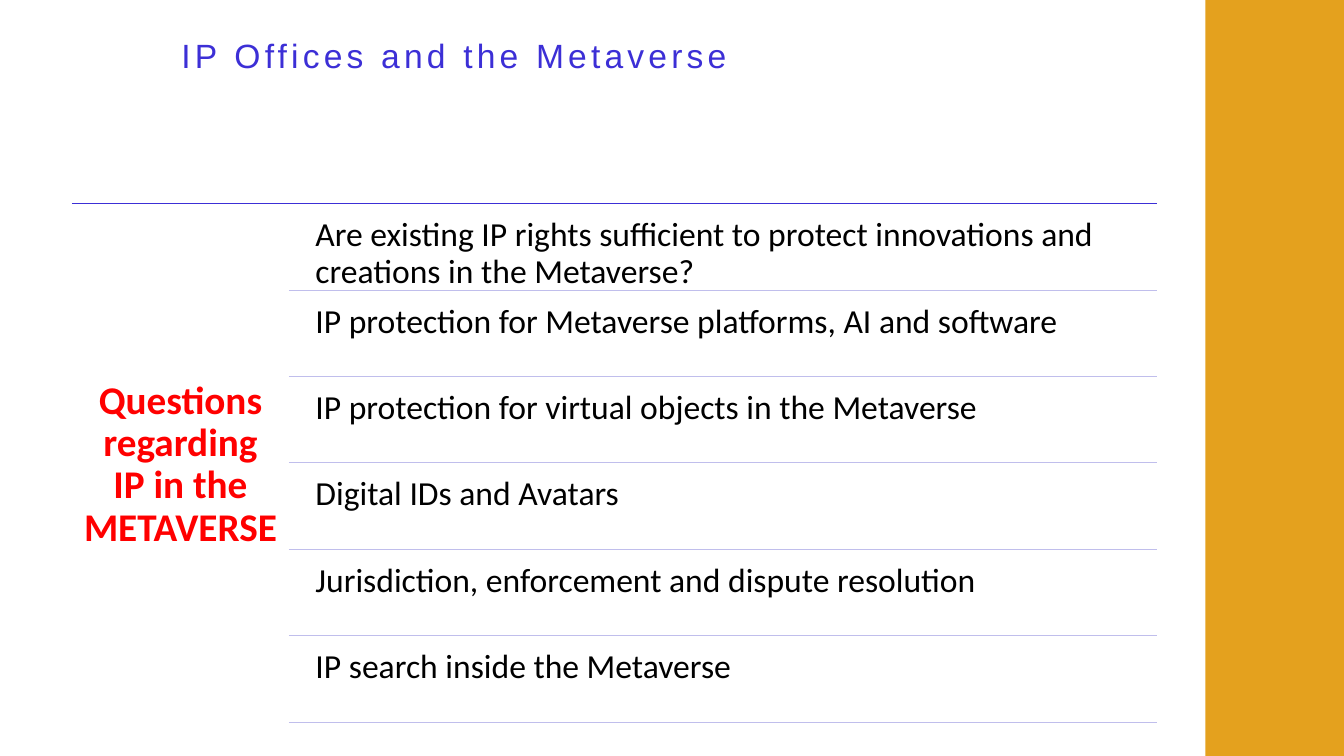
from dataclasses import dataclass

from lxml import etree
from pptx import Presentation
from pptx.dml.color import RGBColor
from pptx.enum import shapes, text
from pptx.oxml import ns
from pptx.util import Pt

TITLE = "IP Offices and the Metaverse"
TOPIC = "Questions regarding IP in the METAVERSE"
QUESTIONS = [
    "Are existing IP rights sufficient to protect innovations and creations in the Metaverse?",
    "IP protection for Metaverse platforms, AI and software",
    "IP protection for virtual objects in the Metaverse",
    "Digital IDs and Avatars",
    "Jurisdiction, enforcement and dispute resolution",
    "IP search inside the Metaverse",
]


@dataclass(frozen=True)
class Theme:
    accent: str = "3C2FD6"
    divider: str = "C0BEEC"
    band: str = "E4A11E"
    topic: str = "FF0000"
    body: str = "000000"
    title_font: str = "Arial"
    body_font: str = "Calibri"
    body_size: int = 24
    topic_size: int = 28
    rule_width: float = 0.5


THEME = Theme()
SLIDE_W, SLIDE_H = 960, 540
BAND_LEFT = 861
LEFT, RIGHT = 51.4, 826.5
TOP, LIST_HEIGHT = 145.5, 373
TOPIC_W = 155
QUESTION_LEFT = 218.3
ROW_GAP = 2.9
ROW_PITCH = 61.7


def write(box, wording, font, size, color, inset, anchor, align, bold=False):
    frame = box.text_frame
    frame.text = wording
    frame.word_wrap = True
    frame.auto_size = text.MSO_AUTO_SIZE.NONE
    frame.vertical_anchor = anchor
    frame.margin_left = frame.margin_right = Pt(inset)
    frame.margin_top = frame.margin_bottom = Pt(inset)
    paragraph = frame.paragraphs[0]
    paragraph.alignment = align
    paragraph.line_spacing = 0.9
    run = paragraph.runs[0]
    run.font.name = font
    run.font.size = Pt(size)
    run.font.bold = bold
    run.font.color.rgb = RGBColor.from_string(color)
    return run


def add_rule(slide, left, y, color):
    """Draw a level line to the right margin and return its effect list."""
    rule = slide.shapes.add_connector(
        shapes.MSO_CONNECTOR.STRAIGHT, Pt(left), Pt(y), Pt(RIGHT), Pt(y))
    rule.line.color.rgb = RGBColor.from_string(color)
    rule.line.width = Pt(THEME.rule_width)
    return etree.SubElement(rule._element.spPr, ns.qn("a:effectLst"))


def add_soft_shadow(effects):
    shadow = etree.SubElement(
        effects, ns.qn("a:outerShdw"), blurRad=str(Pt(4.5)),
        dist=str(Pt(1.5)), dir="5400000", rotWithShape="0")
    black = etree.SubElement(shadow, ns.qn("a:srgbClr"), val="000000")
    etree.SubElement(black, ns.qn("a:alpha"), val="63000")


def add_band(slide):
    band = slide.shapes.add_shape(
        shapes.MSO_SHAPE.RECTANGLE, Pt(BAND_LEFT), 0,
        Pt(SLIDE_W - BAND_LEFT), Pt(SLIDE_H))
    band.shadow.inherit = False
    band.fill.solid()
    band.fill.fore_color.rgb = RGBColor.from_string(THEME.band)
    band.line.fill.background()


def add_title(slide):
    title = slide.shapes.title
    title.left, title.top = Pt(122.4), Pt(24.5)
    title.width, title.height = Pt(761), Pt(33)
    run = write(title, TITLE, THEME.title_font, THEME.body_size, THEME.accent,
                7.2, text.MSO_ANCHOR.MIDDLE, text.PP_ALIGN.LEFT)
    run._r.get_or_add_rPr().set("spc", "300")


def add_questions(slide):
    add_soft_shadow(add_rule(slide, LEFT, TOP, THEME.accent))
    topic = slide.shapes.add_textbox(Pt(LEFT), Pt(TOP), Pt(TOPIC_W), Pt(LIST_HEIGHT))
    write(topic, TOPIC, THEME.body_font, THEME.topic_size, THEME.topic,
          8.4, text.MSO_ANCHOR.MIDDLE, text.PP_ALIGN.CENTER, bold=True)
    for row, wording in enumerate(QUESTIONS):
        top = TOP + ROW_GAP + row * ROW_PITCH
        bottom = top + ROW_PITCH - ROW_GAP
        question = slide.shapes.add_textbox(
            Pt(QUESTION_LEFT), Pt(top), Pt(RIGHT - QUESTION_LEFT), Pt(bottom - top))
        write(question, wording, THEME.body_font, THEME.body_size, THEME.body,
              7.2, text.MSO_ANCHOR.TOP, text.PP_ALIGN.LEFT)
        add_rule(slide, LEFT + TOPIC_W, bottom, THEME.divider)


def main():
    deck = Presentation()
    deck.slide_width, deck.slide_height = Pt(SLIDE_W), Pt(SLIDE_H)
    slide = deck.slides.add_slide(deck.slide_layouts.get_by_name("Title Only"))
    add_band(slide)
    add_title(slide)
    add_questions(slide)
    deck.save("out.pptx")


if __name__ == "__main__":
    main()
